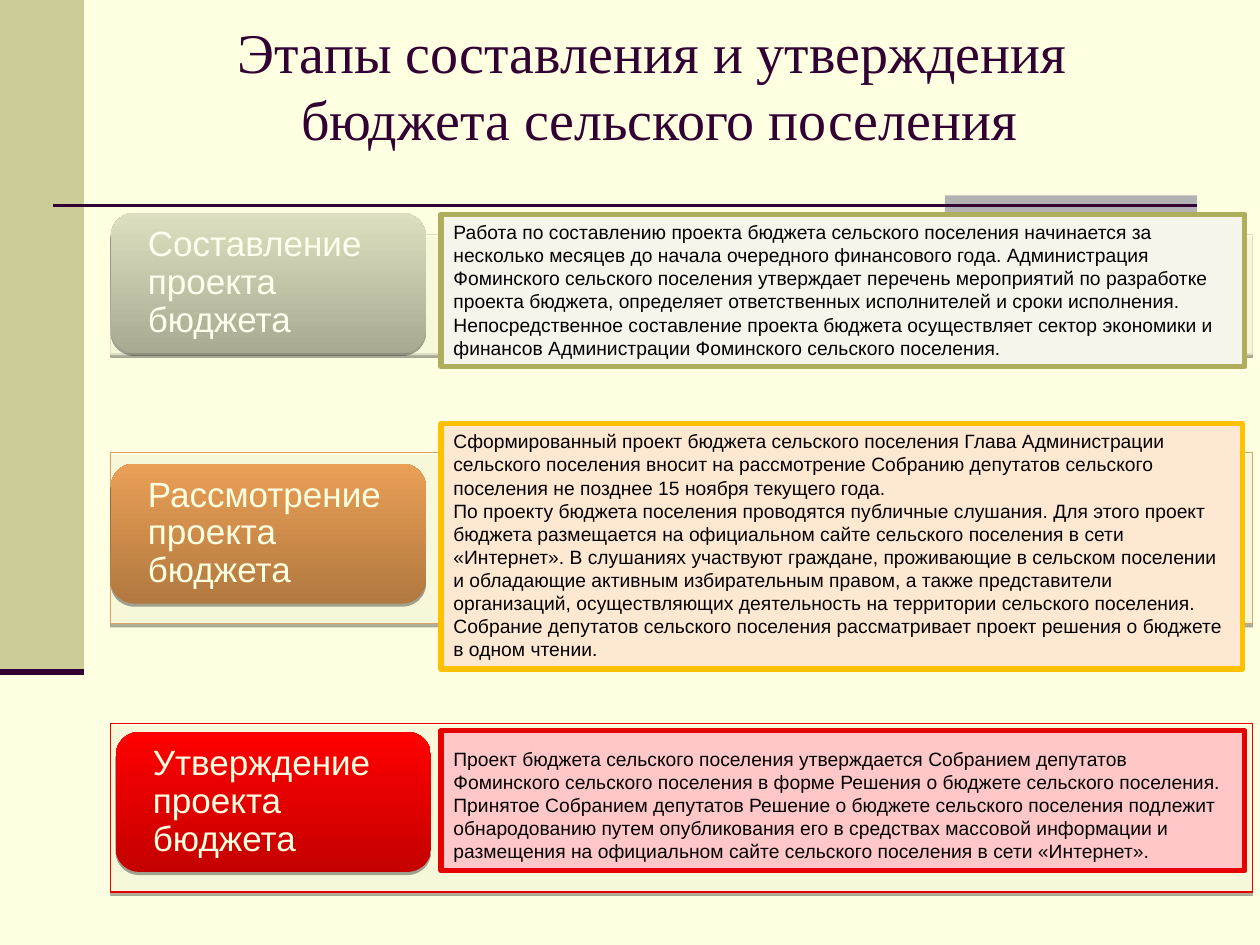
from lxml.etree import SubElement
from pptx import Presentation
from pptx.dml.color import RGBColor
from pptx.enum.shapes import MSO_CONNECTOR, MSO_SHAPE
from pptx.enum.text import MSO_ANCHOR, PP_ALIGN
from pptx.oxml.ns import qn
from pptx.util import Inches, Pt

# Content
TITLE = "Этапы составления и утверждения \vбюджета сельского поселения"
STAGES = [
    {"name": "Составление проекта бюджета",
     "details": [
         "Работа по составлению проекта бюджета сельского поселения начинается за "
         "несколько месяцев до начала очередного финансового года. Администрация "
         "Фоминского сельского поселения утверждает перечень мероприятий по разработке "
         "проекта бюджета, определяет ответственных исполнителей и сроки исполнения. "
         "Непосредственное составление проекта бюджета осуществляет сектор экономики и "
         "финансов Администрации Фоминского сельского поселения."]},
    {"name": "Рассмотрение проекта бюджета",
     "details": [
         "Сформированный проект бюджета сельского поселения Глава Администрации "
         "сельского поселения вносит на рассмотрение Собранию депутатов сельского "
         "поселения не позднее 15 ноября текущего года.",
         "По проекту бюджета поселения проводятся публичные слушания. Для этого проект "
         "бюджета размещается на официальном сайте сельского поселения в сети "
         "«Интернет». В слушаниях участвуют граждане, проживающие в сельском поселении "
         "и обладающие активным избирательным правом, а также представители "
         "организаций, осуществляющих деятельность на территории сельского поселения.",
         "Собрание депутатов сельского поселения рассматривает проект решения о бюджете "
         "в одном чтении."]},
    {"name": "Утверждение проекта бюджета",
     "details": [
         "Проект бюджета сельского поселения утверждается Собранием депутатов "
         "Фоминского сельского поселения в форме Решения о бюджете сельского поселения.",
         "Принятое Собранием депутатов Решение о бюджете сельского поселения подлежит "
         "обнародованию путем опубликования его в средствах массовой информации и "
         "размещения на официальном сайте сельского поселения в сети «Интернет»."]},
]

# Colours and type
THEME = {
    "page": "FFFFE1", "band": "CCCC99", "accent": "B2B2B2", "ink": "330033",
    "text": "000000",
    "title": ("Times New Roman", 32), "tab": ("Arial", 20), "detail": ("Arial", 11),
    "stages": [
        {"frame": "DEDEC5", "tab": ("AAAA92", "DEDEC0"), "tab_text": "FFFFEE",
         "detail": "F5F5EB", "border": "AEAE5D"},
        {"frame": "DDA165", "tab": ("B27940", "E99F56"), "tab_text": "FFFFE1",
         "detail": "FFE8D1", "border": "FFC000"},
        {"frame": "E70000", "tab": ("C50000", "FF0000"), "tab_text": "FFFFE1",
         "detail": "FFC7C7", "border": "E70000"},
    ],
}

# Layout in inches: shared columns (left, width), then (top, height) per row
WIDTH, HEIGHT = 10, 7.5
FRAME, TAB, DETAIL = (0.88, 9.06), (0.88, 2.5), (3.5, 6.38)
TAB_HEIGHT, TAB_INSET = 1.11, 0.24
ROWS = [
    {"frame": (1.86, 0.95), "tab": 1.69, "detail": (1.7, 1.21)},
    {"frame": (3.59, 1.36), "tab": 3.68, "detail": (3.36, 1.95), "trim": 0.02},
    {"frame": (5.74, 1.34), "tab": 5.81, "detail": (5.8, 1.11), "shift": 0.04,
     "detail_inset": 0.13},
]
BAND_WIDTH, BAND_HEIGHT = WIDTH / 15, 5.33
RULE_TOP, RULE_RIGHT = 1.63, 9.5

deck = Presentation()
deck.slide_width, deck.slide_height = Inches(WIDTH), Inches(HEIGHT)
slide = deck.slides.add_slide(deck.slide_layouts[6])
slide.background.fill.solid()
slide.background.fill.fore_color.rgb = RGBColor.from_string(THEME["page"])


def apply(target, values):
    for attribute, value in values.items():
        setattr(target, attribute, value)


def add_box(left, top, width, height, fill=None, line=None, line_width=0.75,
            kind=MSO_SHAPE.RECTANGLE):
    box = slide.shapes.add_shape(kind, *map(Inches, (left, top, width, height)))
    box.shadow.inherit = False
    if fill:
        box.fill.solid()
        box.fill.fore_color.rgb = RGBColor.from_string(fill)
    if line:
        box.line.color.rgb = RGBColor.from_string(line)
        box.line.width = Pt(line_width)
    else:
        box.line.fill.background()
    return box


def add_rule(start, end, top, width):
    rule = slide.shapes.add_connector(
        MSO_CONNECTOR.STRAIGHT, *map(Inches, (start, top, end, top)))
    rule.line.color.rgb = RGBColor.from_string(THEME["ink"])
    rule.line.width = Pt(width)
    SubElement(rule._element.spPr, qn("a:effectLst"))


def add_alpha(color, percent):
    SubElement(color, qn("a:alpha"), val=str(percent * 1000))


def cast_shadow(box):
    effects = box._element.spPr.find(qn("a:effectLst"))
    shadow = SubElement(effects, qn("a:outerShdw"), blurRad="0",
                        dist=str(Pt(1.8)), dir="5400000", rotWithShape="0")
    add_alpha(SubElement(shadow, qn("a:srgbClr"), val="000000"), 35)


def write(box, paragraphs, font, color, frame_format, paragraph_format):
    frame = box.text_frame
    apply(frame, {"word_wrap": True, **frame_format})
    frame.text = "\n".join(paragraphs)
    for paragraph in frame.paragraphs:
        apply(paragraph, paragraph_format)
        for run in paragraph.runs:
            apply(run.font, {"name": font[0], "size": Pt(font[1])})
            run.font.color.rgb = RGBColor.from_string(color)


# Side band, accent bar and rules
add_box(0, 0, BAND_WIDTH, BAND_HEIGHT, THEME["band"])
add_box(7.5, 1.55, 2, 0.2, THEME["accent"])
add_rule(0.42, RULE_RIGHT, RULE_TOP, 1.5)
add_rule(0, BAND_WIDTH, BAND_HEIGHT, 3.5)

# Title
heading = slide.shapes.add_textbox(*map(Inches, (0.83, 0.12, 8.81, 1.1)))
write(heading, [TITLE], THEME["title"], THEME["ink"],
      {"vertical_anchor": MSO_ANCHOR.MIDDLE}, {"alignment": PP_ALIGN.CENTER})

# Stages: frame, name tab and details
for stage, row, colors in zip(STAGES, ROWS, THEME["stages"]):
    frame_top, frame_height = row["frame"]
    stage_frame = add_box(FRAME[0], frame_top, FRAME[1], frame_height,
                          THEME["page"], colors["frame"])
    add_alpha(stage_frame._element.spPr.find(qn("a:solidFill"))[0], 90)
    cast_shadow(stage_frame)

    name_tab = add_box(TAB[0] + row.get("shift", 0), row["tab"], TAB[1], TAB_HEIGHT,
                       kind=MSO_SHAPE.ROUNDED_RECTANGLE)
    name_tab.fill.gradient()
    name_tab.fill.gradient_angle = 90
    for stop, color in zip(name_tab.fill.gradient_stops, colors["tab"]):
        stop.color.rgb = RGBColor.from_string(color)
    cast_shadow(name_tab)
    # The rounded corners add to the side insets
    write(name_tab, [stage["name"]], THEME["tab"], colors["tab_text"],
          {"vertical_anchor": MSO_ANCHOR.MIDDLE,
           "margin_left": Inches(TAB_INSET), "margin_right": Inches(TAB_INSET)},
          {"alignment": PP_ALIGN.LEFT, "line_spacing": 0.9, "space_after": Pt(8)})

    detail_top, detail_height = row["detail"]
    details = add_box(DETAIL[0], detail_top, DETAIL[1] - row.get("trim", 0),
                      detail_height, colors["detail"], colors["border"], 3)
    write(details, stage["details"], THEME["detail"], THEME["text"],
          {"vertical_anchor": MSO_ANCHOR.TOP,
           "margin_top": Inches(row.get("detail_inset", 0.05))},
          {"alignment": PP_ALIGN.LEFT})

deck.save("out.pptx")
